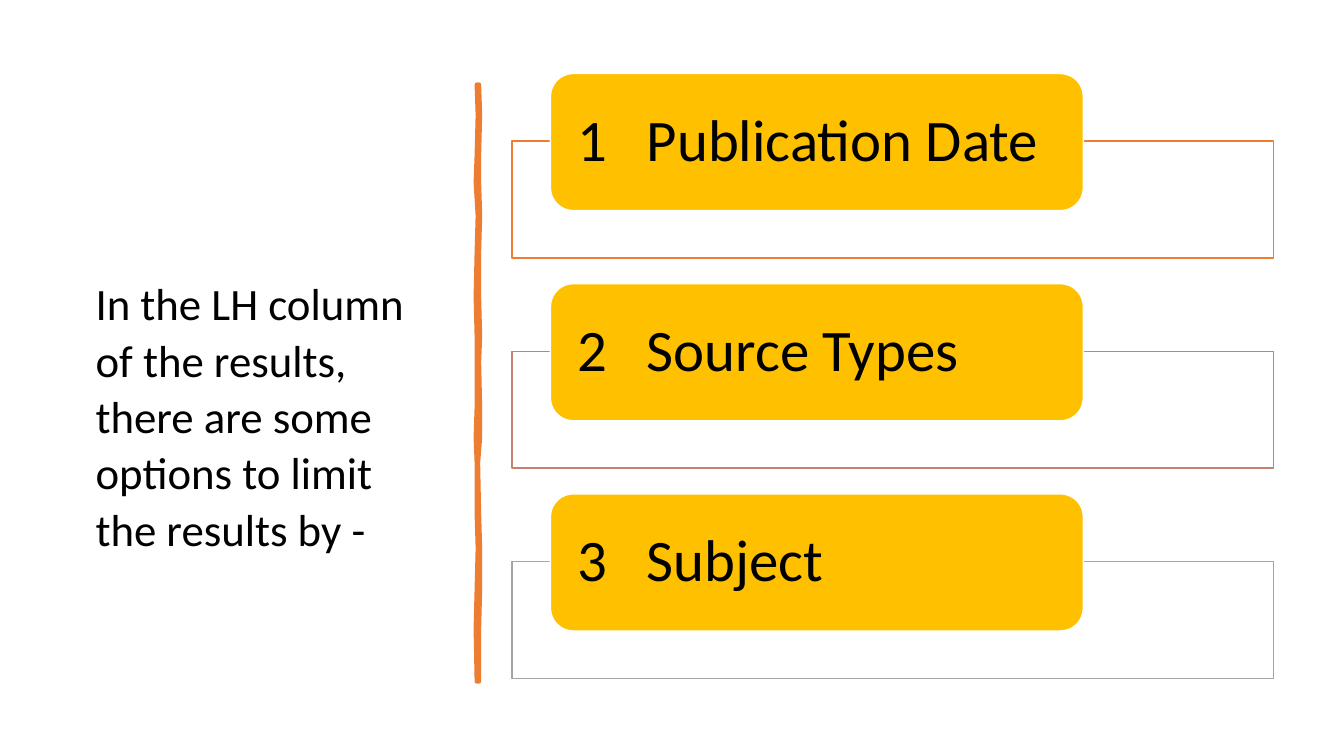
from lxml import etree
from pptx import Presentation
from pptx.dml.color import RGBColor
from pptx.enum.shapes import MSO_SHAPE
from pptx.enum.text import MSO_ANCHOR
from pptx.oxml.ns import qn
from pptx.util import Inches, Pt

BLACK, WHITE, ORANGE, GOLD = "000000", "FFFFFF", "ED7D31", "FFC000"
OPTIONS = [("1", "Publication Date", ORANGE),
           ("2", "Source Types", "C48170"),
           ("3", "Subject", "A5A5A5")]
# height down the stroke, left edge, right edge
BRUSH_EDGES = [(0, 0.02, 0.04), (0.3, 0.03, 0.05), (0.7, 0.02, 0.04),
               (0.97, 0.01, 0.04), (1.3, 0.03, 0.05), (1.66, 0.02, 0.04),
               (2.1, 0.01, 0.04), (2.5, 0.02, 0.05), (2.75, 0.02, 0.04),
               (3.2, 0.02, 0.05), (3.5, 0.01, 0.05), (3.75, 0.02, 0.03),
               (4.25, 0.02, 0.04), (4.6, 0.03, 0.05), (5, 0.02, 0.05),
               (5.4, 0.01, 0.04), (5.92, 0.02, 0.04)]


def color(code):
    return RGBColor.from_string(code)


def apply_format(target, values):
    for name, value in values.items():
        setattr(target, name, value)


def paint(shape, fill, line, width):
    shape.shadow.inherit = False
    shape.fill.solid()
    shape.fill.fore_color.rgb = color(fill)
    shape.line.color.rgb = color(line)
    shape.line.width = Pt(width)


def write(shape, text, size, frame_values, para_values):
    frame = shape.text_frame
    apply_format(frame, {"word_wrap": True,
                         "vertical_anchor": MSO_ANCHOR.MIDDLE, **frame_values})
    para = frame.paragraphs[0]
    apply_format(para, para_values)
    span = para.add_run()
    span.text = text
    apply_format(span.font, {"name": "Calibri", "size": Pt(size)})
    span.font.color.rgb = color(BLACK)
    return para


def add_intro(page, left, top, width, height):
    box = page.shapes.add_textbox(*map(Inches, (left, top, width, height)))
    write(box, "In the LH column of the results, there are some options "
          "to limit the results by -", 32, {},
          {"line_spacing": 1.05, "space_after": Pt(8)})


def add_brush_stroke(page, left, top):
    """Draw the uneven vertical divider as one closed outline."""
    down = [(x, y) for y, x, _ in BRUSH_EDGES]
    up = [(x, y) for y, _, x in reversed(BRUSH_EDGES)]
    points = [(Inches(left + x), Inches(top + y)) for x, y in down + up]
    builder = page.shapes.build_freeform(*points[0])
    builder.add_line_segments(points[1:], close=True)
    paint(builder.convert_to_shape(), ORANGE, ORANGE, 3.25)


def add_option(page, left, top, width, number, label, line):
    """Draw a framed plate with a gold label overlapping its top edge."""
    plate = page.shapes.add_shape(
        MSO_SHAPE.RECTANGLE, *map(Inches, (left, top + 0.67, width, 1.16)))
    paint(plate, WHITE, line, 1)
    fill_color = plate.fill._xPr.find(qn("a:solidFill"))[0]
    etree.SubElement(fill_color, qn("a:alpha"), val="90000")

    tag = page.shapes.add_shape(
        MSO_SHAPE.ROUNDED_RECTANGLE,
        *map(Inches, (left + 0.38, top, width * 0.7, 1.36)))
    paint(tag, GOLD, WHITE, 1)
    para = write(tag, f"{number}\t{label}", 42,
                 {"margin_left": Inches(0.2), "margin_right": Inches(0.2),
                  "margin_top": 0, "margin_bottom": 0},
                 {"line_spacing": 0.9})
    indent = Inches(0.69)
    for name, value in {"marL": indent, "indent": -indent, "algn": "l"}.items():
        para._p.get_or_add_pPr().set(name, str(value))


def add_options(page, left, top, width, height):
    pitch = (height - 1.83) / (len(OPTIONS) - 1)
    for row, option in enumerate(OPTIONS):
        add_option(page, left, top + row * pitch, width, *option)


def main():
    deck = Presentation()
    deck.slide_width, deck.slide_height = Inches(13.33), Inches(7.5)
    page = deck.slides.add_slide(deck.slide_layouts[6])
    add_brush_stroke(page, 4.71, 0.84)
    add_intro(page, 0.85, 2.31, 3.54, 3.6)
    add_options(page, 5.08, 0.73, 7.55, 6)
    deck.save("out.pptx")


if __name__ == "__main__":
    main()
